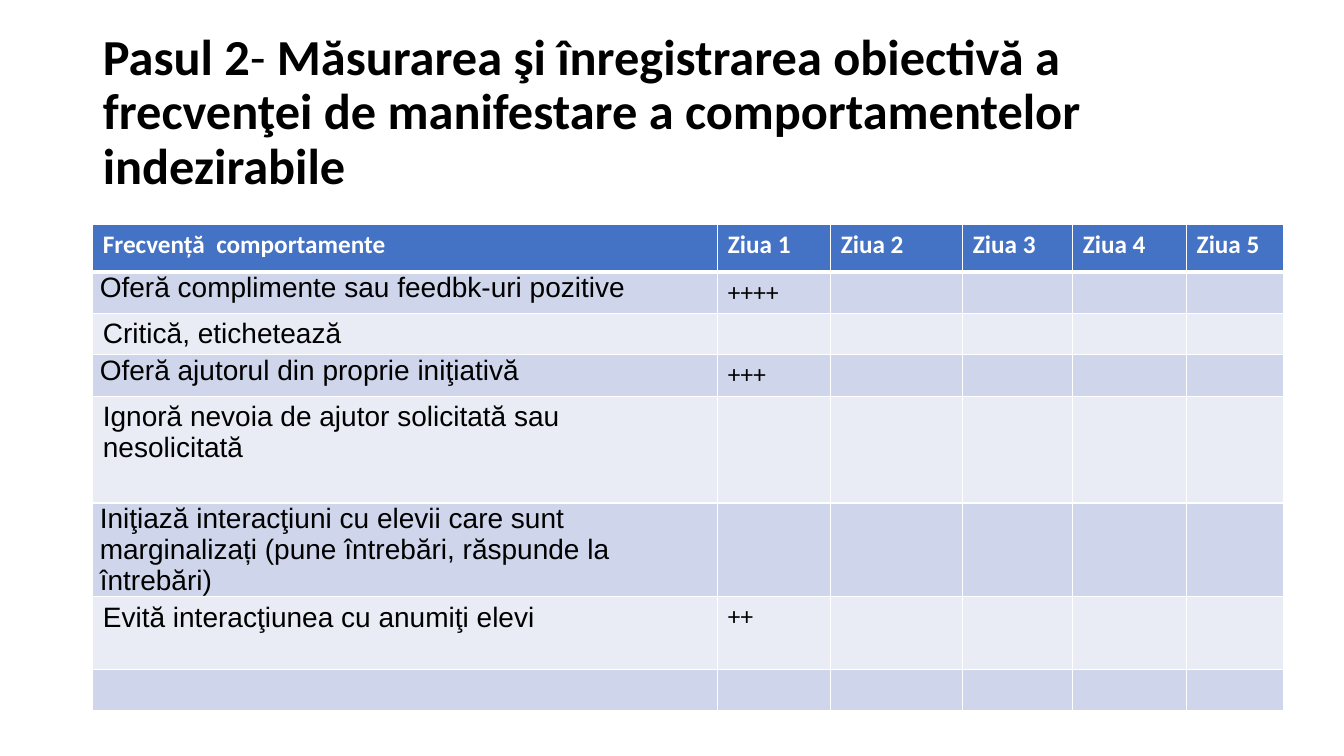
"""Build a slide with a frequency table for observed behaviours."""
from lxml import etree
from pptx import Presentation
from pptx.dml.color import RGBColor
from pptx.enum.text import MSO_ANCHOR, MSO_AUTO_SIZE, PP_ALIGN
from pptx.oxml.ns import qn
from pptx.util import Inches, Pt

LEFT, MIDDLE, NO_FIT = PP_ALIGN.LEFT, MSO_ANCHOR.MIDDLE, MSO_AUTO_SIZE.NONE
BLACK = RGBColor(0x00, 0x00, 0x00)
WHITE = RGBColor(0xFF, 0xFF, 0xFF)
HEADER_BLUE = RGBColor(0x44, 0x72, 0xC4)
BAND_DARK = RGBColor(0xCF, 0xD5, 0xEA)
BAND_LIGHT = RGBColor(0xE9, 0xEB, 0xF5)

LEFT_EDGE = 0.92
COLUMN_WIDTHS = [6.2, 1.12, 1.31, 1.09, 1.13, 0.96]
ROW_HEIGHTS = [0.47, 0.41, 0.41, 0.41, 1.06, 0.92, 0.72, 0.41]
HEADERS = ["Frecvență  comportamente"] + [f"Ziua {day}" for day in range(1, 6)]
BEHAVIOURS = [
    ("Oferă complimente sau feedbk-uri pozitive", "++++"),
    ("Critică, etichetează", ""),
    ("Oferă ajutorul din proprie iniţiativă", "+++"),
    ("Ignoră nevoia de ajutor solicitată sau nesolicitată", ""),
    ("Iniţiază interacţiuni cu elevii care sunt marginalizați "
     "(pune întrebări, răspunde la întrebări)", ""),
    ("Evită interacţiunea cu anumiţi elevi", "++"),
    ("", ""),
]


def add_run(paragraph, text, font_name, size, color, bold):
    run = paragraph.add_run()
    run.text = text
    run.font.name = font_name
    run.font.size = Pt(size)
    run.font.color.rgb = color
    run.font.bold = bold


def add_border(cell, side, width):
    properties = cell._tc.get_or_add_tcPr()
    line = etree.SubElement(properties, qn(f"a:ln{side}"), w=str(Pt(width)))
    fill = etree.SubElement(line, qn("a:solidFill"))
    etree.SubElement(fill, qn("a:srgbClr"), val=str(WHITE))


presentation = Presentation()
presentation.slide_width = Inches(13.33)
presentation.slide_height = Inches(7.5)
slide = presentation.slides.add_slide(presentation.slide_layouts[5])

title = slide.shapes.title
title.left, title.top = Inches(LEFT_EDGE), Inches(0.4)
title.width, title.height = Inches(11.5), Inches(1.45)
title.text_frame.word_wrap = True
title.text_frame.auto_size = NO_FIT
title.text_frame.vertical_anchor = MIDDLE
title_paragraph = title.text_frame.paragraphs[0]
title_paragraph.alignment = LEFT
title_paragraph.line_spacing = 0.9
for text, bold in [
    ("Pasul 2", True),
    ("- ", False),
    ("Măsurarea şi înregistrarea obiectivă a frecvenţei de manifestare "
     "a comportamentelor indezirabile", True),
]:
    add_run(title_paragraph, text, "Calibri", 36, BLACK, bold)

table = slide.shapes.add_table(
    len(ROW_HEIGHTS), len(COLUMN_WIDTHS), Inches(LEFT_EDGE), Inches(2.23),
    Inches(sum(COLUMN_WIDTHS)), Inches(sum(ROW_HEIGHTS))).table
for column, width in zip(table.columns, COLUMN_WIDTHS):
    column.width = Inches(width)
for row, height in zip(table.rows, ROW_HEIGHTS):
    row.height = Inches(height)

rows = [HEADERS] + [[name, marks, "", "", "", ""] for name, marks in BEHAVIOURS]
for row_index, texts in enumerate(rows):
    is_header = row_index == 0
    band = BAND_DARK if row_index % 2 else BAND_LIGHT
    for column_index, text in enumerate(texts):
        cell = table.cell(row_index, column_index)
        is_behaviour = column_index == 0 and not is_header
        for side in "LRTB":
            thick = (side, row_index) in [("B", 0), ("T", 1)]
            add_border(cell, side, 3 if thick else 1)
        cell.fill.solid()
        cell.fill.fore_color.rgb = HEADER_BLUE if is_header else band
        if is_behaviour and row_index in (1, 3, 5):
            cell.margin_left = cell.margin_right = Inches(0.07)
            cell.margin_top = cell.margin_bottom = 0
        if text:
            add_run(cell.text_frame.paragraphs[0], text,
                    "Arial" if is_behaviour else "Calibri",
                    20 if is_behaviour else 18,
                    WHITE if is_header else BLACK, is_header)

presentation.save("out.pptx")
